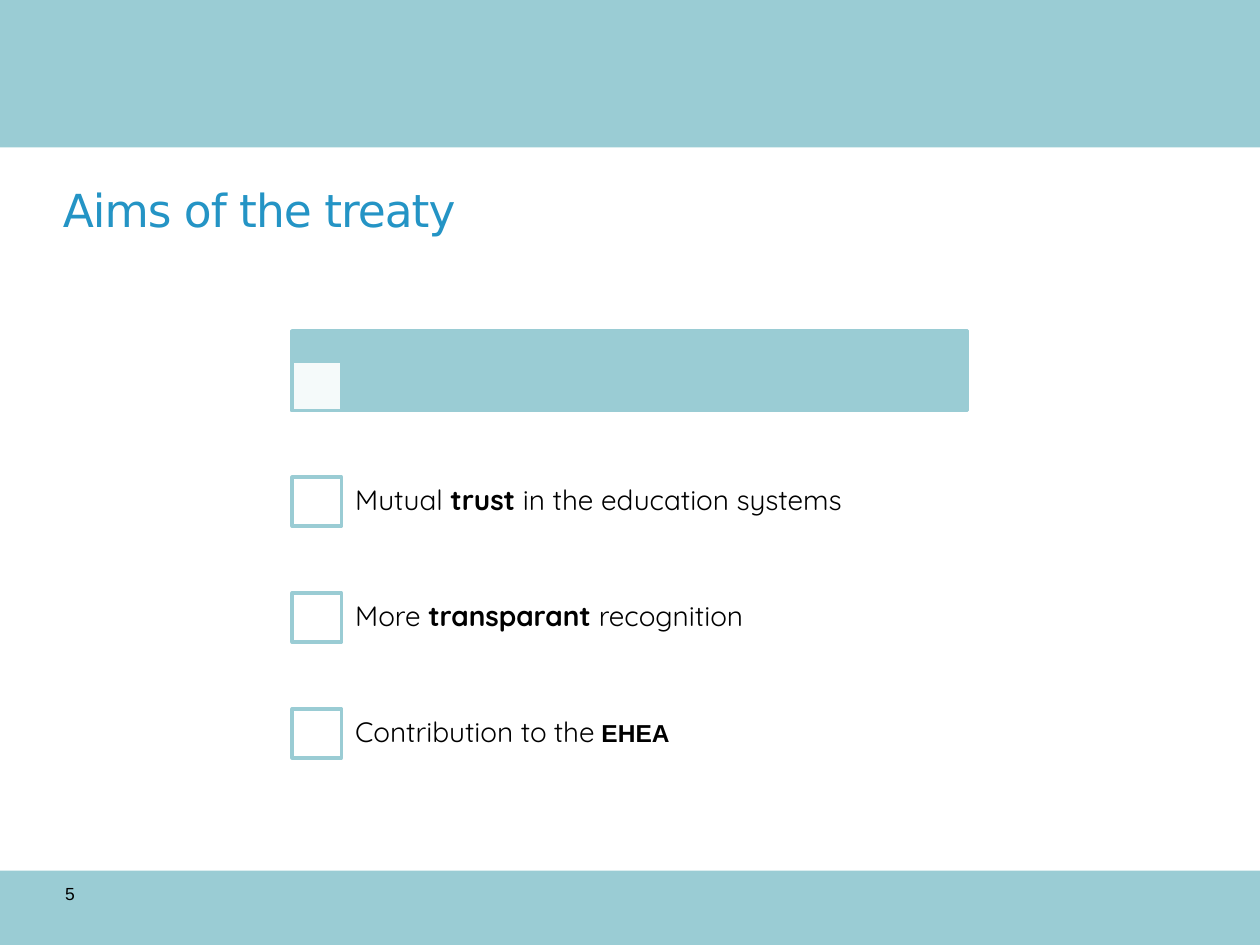
from typing import NamedTuple

from lxml import etree
from pptx import Presentation
from pptx.dml.color import RGBColor
from pptx.enum import shapes, text
from pptx.oxml import ns
from pptx.util import Pt

TEAL = RGBColor(0x9A, 0xCC, 0xD4)
BLUE = RGBColor(0x24, 0x94, 0xC5)
WHITE = RGBColor(0xFF, 0xFF, 0xFF)
BLACK = RGBColor(0, 0, 0)

LIST_LEFT, LIST_WIDTH = 167, 386
BOX_SIZE = 28.1
AIM_TOP, AIM_PITCH = 253.6, 66.2
AIM_LEFT, AIM_WIDTH = 194.4, 358.6


class Area(NamedTuple):
    left: float
    top: float
    width: float
    height: float

    def lengths(self):
        return [Pt(value) for value in self]


class Span(NamedTuple):
    wording: str
    bold: bool = False
    font: str = "Quicksand"
    size: float = 16
    color: RGBColor = BLACK


AIMS = [
    [Span("Mutual "), Span("trust", bold=True), Span(" in the education systems")],
    [Span("More "), Span("transparant ", bold=True), Span("recognition")],
    [
        Span("Contribution to"),
        Span(" ", font="Arial", size=14),
        Span("the"),
        Span(" ", font="Arial", size=14),
        Span("EHEA", bold=True, font="Arial", size=14),
    ],
]


def add_block(slide, area: Area, fill: RGBColor, outlined: bool = False):
    block = slide.shapes.add_shape(shapes.MSO_SHAPE.RECTANGLE, *area.lengths())
    block.shadow.inherit = False
    block.fill.solid()
    block.fill.fore_color.rgb = fill
    if outlined:
        block.line.color.rgb = TEAL
        block.line.width = Pt(2)
    else:
        block.line.fill.background()
    return block


def set_opacity(block, percent: int) -> None:
    color = block.fill._xPr.find(".//" + ns.qn("a:srgbClr"))
    etree.SubElement(color, ns.qn("a:alpha"), val=str(percent * 1000))


def add_text(slide, area: Area, spans: list[Span], frame_format: dict,
             paragraph_format: dict | None = None):
    frame = slide.shapes.add_textbox(*area.lengths()).text_frame
    paragraph = frame.paragraphs[0]
    for target, values in (
        (frame, {"word_wrap": True, **frame_format}),
        (paragraph, paragraph_format or {}),
    ):
        for name, value in values.items():
            setattr(target, name, value)
    for span in spans:
        run = paragraph.add_run()
        run.text = span.wording
        font_format = {"name": span.font, "size": Pt(span.size), "bold": span.bold}
        for name, value in font_format.items():
            setattr(run.font, name, value)
        run.font.color.rgb = span.color
    return paragraph


def add_aims(slide) -> None:
    margins = {f"margin_{side}": Pt(8.6) for side in ("left", "top", "right", "bottom")}
    middle = {"vertical_anchor": text.MSO_ANCHOR.MIDDLE}
    for index, spans in enumerate(AIMS):
        top = AIM_TOP + index * AIM_PITCH
        box_top = top + (AIM_PITCH - BOX_SIZE) / 2
        add_block(slide, Area(LIST_LEFT, box_top, BOX_SIZE, BOX_SIZE), WHITE, outlined=True)
        add_text(slide, Area(AIM_LEFT, top, AIM_WIDTH, AIM_PITCH), spans,
                 {**margins, **middle}, {"line_spacing": 0.9})


def main() -> None:
    deck = Presentation()
    deck.slide_width, deck.slide_height = Pt(720), Pt(540)
    slide = deck.slides.add_slide(deck.slide_layouts[6])

    add_block(slide, Area(0, 497.5, 720, 42.5), TEAL)
    add_block(slide, Area(0, 0, 720, 84.3), TEAL)
    add_text(slide, Area(30.2, 501.1, 56.2, 28.8),
             [Span("5", font="Arial", size=10)],
             {"vertical_anchor": text.MSO_ANCHOR.TOP})

    add_block(slide, Area(LIST_LEFT, 189, LIST_WIDTH, 45.7), TEAL, outlined=True)
    header_box = add_block(slide, Area(LIST_LEFT, 206.6, BOX_SIZE, BOX_SIZE), WHITE, outlined=True)
    set_opacity(header_box, 90)
    add_aims(slide)

    title = add_text(slide, Area(28.8, 97.2, 617.8, 45.4),
                     [Span("Aims of the treaty", font="DejaVu Sans", size=26, color=BLUE)],
                     {"vertical_anchor": text.MSO_ANCHOR.MIDDLE})
    title.runs[0].font._element.set("spc", "-60")

    deck.save("out.pptx")


if __name__ == "__main__":
    main()
